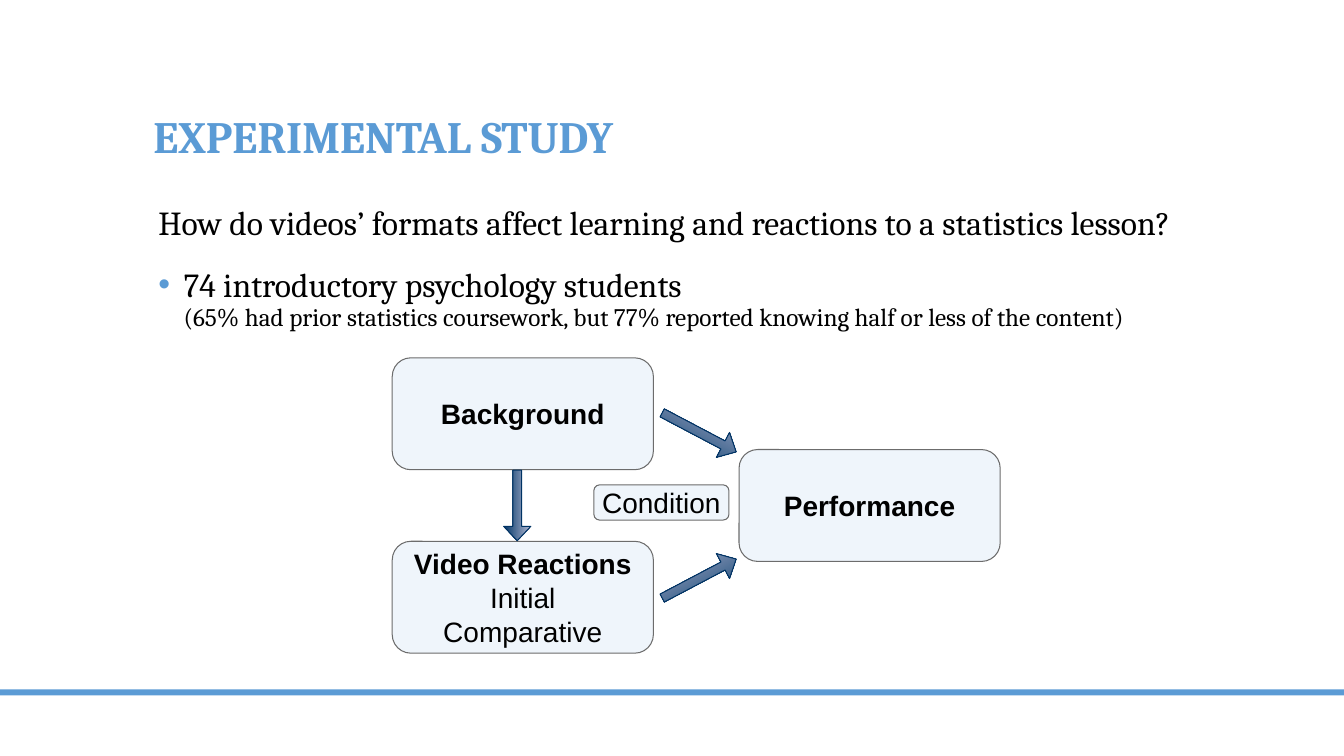
import pptx
import pptx.util
import pptx.dml.color
import pptx.enum.shapes
import pptx.enum.text
import pptx.oxml
import pptx.oxml.ns
from pptx.util import Inches

SHAPES = pptx.enum.shapes.MSO_SHAPE
ALIGN = pptx.enum.text.PP_ALIGN
ANCHOR = pptx.enum.text.MSO_ANCHOR
COLORS = {
    "accent": "5B9BD5",
    "text": "000000",
    "box": "EFF5FB",
    "box_line": "6C6C6C",
    "arrow_dark": "003466",
    "arrow_light": "B1B8D2",
    "arrow_line": "003364",
}


def rgb(name):
    return pptx.dml.color.RGBColor.from_string(COLORS[name])


class SlideBuilder:
    heading_font = "Cambria"
    diagram_font = "Arial"

    def __init__(self, prs):
        self.s = prs.slides.add_slide(prs.slide_layouts[1])

    def run(self, p, text, font, size, color="text", bold=False):
        r = p.add_run()
        r.text = text
        r.font.name = font
        r.font.size = pptx.util.Pt(size)
        r.font.bold = bold
        r.font.color.rgb = rgb(color)

    def place(self, sp, left, top, width, height):
        sp.left, sp.top = Inches(left), Inches(top)
        sp.width, sp.height = Inches(width), Inches(height)
        sp.text_frame.word_wrap = True
        sp.text_frame.auto_size = pptx.enum.text.MSO_AUTO_SIZE.NONE
        return sp.text_frame

    def title(self, text, *at):
        tf = self.place(self.s.shapes.title, *at)
        tf.vertical_anchor = ANCHOR.BOTTOM
        p = tf.paragraphs[0]
        p.alignment = ALIGN.LEFT
        p.line_spacing = 0.9
        self.run(p, text, self.heading_font, 32, "accent", True)

    def body(self, items, *at):
        tf = self.place(self.s.placeholders[1], *at)
        for i, (lines, bullet) in enumerate(items):
            p = tf.add_paragraph() if i else tf.paragraphs[0]
            self.bullet(p, bullet)
            p.line_spacing = 0.9
            p.space_before = pptx.util.Pt(18 if i else 0)
            for j, (text, size) in enumerate(lines):
                if j:
                    p.add_line_break()
                self.run(p, text, self.heading_font, size)

    def bullet(self, p, char):
        pPr = p._p.get_or_add_pPr()
        pPr.set("marL", str(Inches(0.3 if char else 0.05)))
        pPr.set("indent", str(Inches(-0.25 if char else 0)))
        ns = pptx.oxml.ns.nsdecls("a")
        if char:
            tags = [
                f'<a:buClr {ns}><a:srgbClr val="{COLORS["accent"]}"/></a:buClr>',
                f'<a:buFont {ns} typeface="Arial"/>',
                f'<a:buChar {ns} char="{char}"/>',
            ]
        else:
            tags = [f"<a:buNone {ns}/>"]
        for tag in tags:
            pPr.append(pptx.oxml.parse_xml(tag))

    def shape(self, kind, left, top, width, height, line=None):
        sp = self.s.shapes.add_shape(
            kind, Inches(left), Inches(top), Inches(width), Inches(height))
        sp.shadow.inherit = False
        if line:
            sp.line.color.rgb = rgb(line)
            sp.line.width = pptx.util.Pt(0.75)
        else:
            sp.line.fill.background()
        return sp

    def bar(self, *at):
        sp = self.shape(SHAPES.RECTANGLE, *at)
        sp.fill.solid()
        sp.fill.fore_color.rgb = rgb("accent")

    def box(self, lines, *at):
        sp = self.shape(SHAPES.ROUNDED_RECTANGLE, *at, line="box_line")
        sp.fill.solid()
        sp.fill.fore_color.rgb = rgb("box")
        tf = sp.text_frame
        tf.word_wrap = True
        tf.vertical_anchor = ANCHOR.MIDDLE
        tf.margin_left = tf.margin_right = Inches(0.05)
        tf.margin_top = tf.margin_bottom = Inches(0.05)
        for i, (text, bold) in enumerate(lines):
            p = tf.add_paragraph() if i else tf.paragraphs[0]
            p.alignment = ALIGN.CENTER
            self.run(p, text, self.diagram_font, 20, bold=bold)

    def arrow(self, rotation, *at):
        sp = self.shape(SHAPES.RIGHT_ARROW, *at, line="arrow_line")
        sp.adjustments[0], sp.adjustments[1] = 0.32, 0.53
        sp.rotation = rotation
        sp.fill.gradient()
        sp.fill.gradient_angle = 90
        for stop, name in zip(sp.fill.gradient_stops, ("arrow_dark", "arrow_light")):
            stop.color.rgb = rgb(name)
            stop.position = 0 if name == "arrow_dark" else 1


def main():
    prs = pptx.Presentation()
    prs.slide_width, prs.slide_height = Inches(13.33), Inches(7.5)
    slide = SlideBuilder(prs)
    slide.bar(0, 6.84, 13.33, 0.06)
    slide.title("EXPERIMENTAL STUDY", 1.42, 0.42, 10.5, 1.25)
    slide.body([
        ([("How do videos’ formats affect learning and reactions to a statistics lesson?", 24)], None),
        ([("74 introductory psychology students", 24),
          ("(65% had prior statistics coursework, but 77% reported knowing half or less of the content)", 18)], "•"),
    ], 1.42, 2, 10.9, 4.5)

    box_size = (2.59, 1.11)
    slide.box([("Background", True)], 3.89, 3.55, *box_size)
    slide.box([("Video Reactions", True), ("Initial", False), ("Comparative", False)],
              3.89, 5.37, *box_size)
    slide.box([("Performance", True)], 7.33, 4.46, *box_size)
    for rotation, top in ((27.8, 4.15), (332.2, 5.6)):
        slide.arrow(rotation, 6.52, top, 0.83, 0.28)
    slide.box([("Condition", False)], 5.89, 4.81, 1.34, 0.35)
    slide.arrow(90, 4.78, 4.88, 0.7, 0.27)
    prs.save("out.pptx")


if __name__ == "__main__":
    main()
